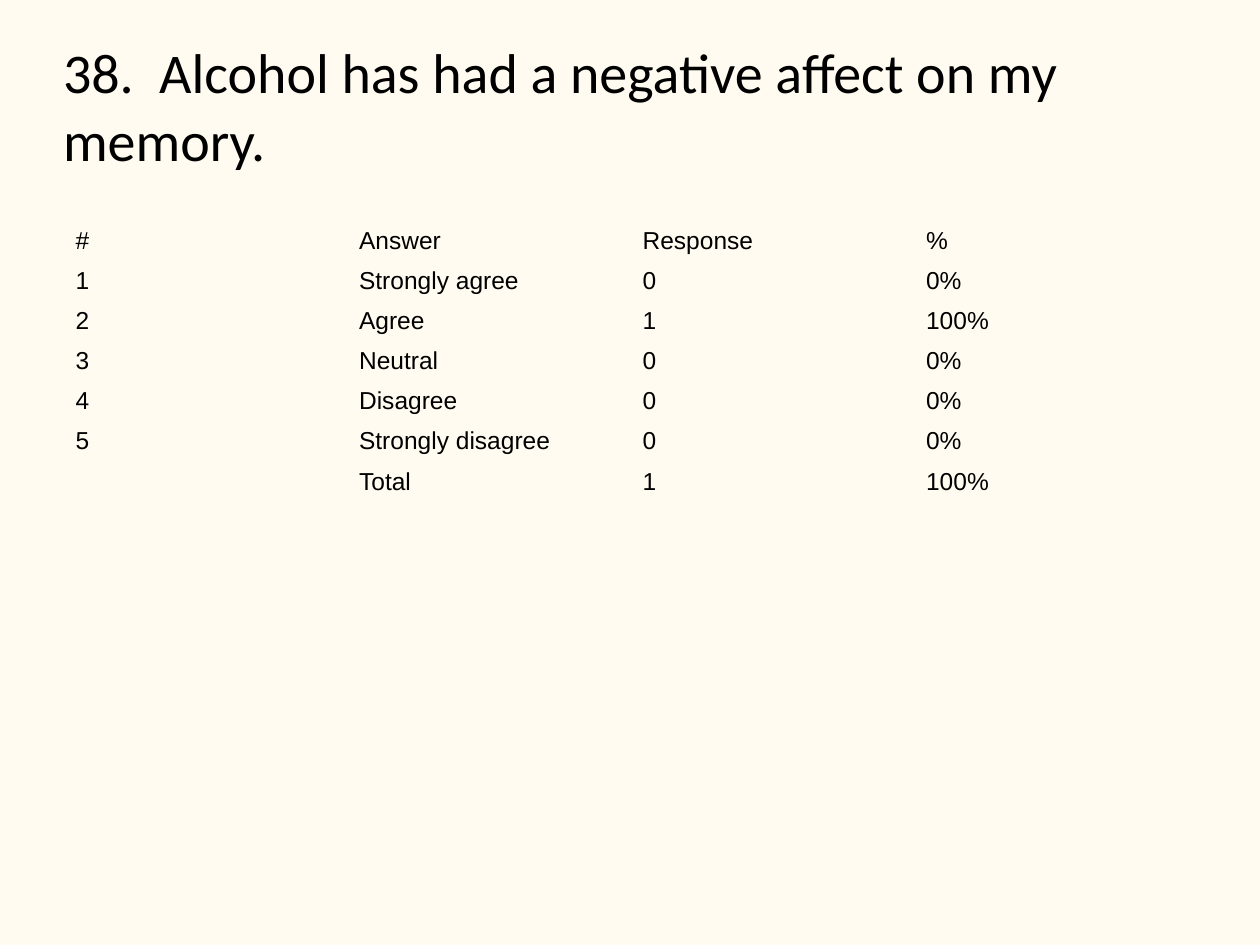
import pptx
import pptx.dml.color
import pptx.enum.text
import pptx.util
from lxml import etree
from pptx.oxml.ns import qn
from pptx.util import Inches

TITLE = "38.  Alcohol has had a negative affect on my memory."
ROWS = [
    ("#", "Answer", "Response", "%"),
    ("1", "Strongly agree", "0", "0%"),
    ("2", "Agree", "1", "100%"),
    ("3", "Neutral", "0", "0%"),
    ("4", "Disagree", "0", "0%"),
    ("5", "Strongly disagree", "0", "0%"),
    ("", "Total", "1", "100%"),
]

BACKGROUND = pptx.dml.color.RGBColor(0xFF, 0xFB, 0xF0)
BLACK = pptx.dml.color.RGBColor(0, 0, 0)
LEFT, WIDTH = 0.5, 9
TABLE_TOP, ROW_HEIGHT = 1.75, 0.19
CELL_SIZE = 14


def format_runs(paragraph, font_name, size):
    paragraph.alignment = pptx.enum.text.PP_ALIGN.LEFT
    for run in paragraph.runs:
        run.font.name = font_name
        run.font.size = pptx.util.Pt(size)
        run.font.bold = False
        run.font.color.rgb = BLACK


def set_round_rectangle(shape):
    """Give a placeholder a rounded rectangle outline with radius 0."""
    geometry = etree.SubElement(shape._element.spPr, qn("a:prstGeom"),
                                prst="roundRect")
    adjustments = etree.SubElement(geometry, qn("a:avLst"))
    etree.SubElement(adjustments, qn("a:gd"), name="adj", fmla="val 0")


def add_title(slide):
    title = slide.shapes.title
    title.left, title.top = Inches(LEFT), Inches(0.3)
    title.width, title.height = Inches(WIDTH), Inches(1.25)
    set_round_rectangle(title)
    frame = title.text_frame
    frame.text = TITLE
    frame.word_wrap = True
    frame.auto_size = pptx.enum.text.MSO_AUTO_SIZE.NONE
    frame.vertical_anchor = pptx.enum.text.MSO_ANCHOR.TOP
    frame.margin_left = frame.margin_right = 0
    frame.margin_top = frame.margin_bottom = 0
    format_runs(frame.paragraphs[0], "Calibri", 32)


def add_answer_table(slide):
    table = slide.shapes.add_table(
        len(ROWS), len(ROWS[0]), Inches(LEFT), Inches(TABLE_TOP),
        Inches(WIDTH), Inches(ROW_HEIGHT * len(ROWS))).table
    table.first_row = table.horz_banding = False
    # The "No Style, No Grid" table style has no borders
    style = table._tbl.tblPr.find(qn("a:tableStyleId"))
    style.text = "{2D5ABB26-0587-4C30-8999-92F81FD0307C}"
    for row, texts in zip(table.rows, ROWS):
        row.height = Inches(ROW_HEIGHT)
        for cell, text in zip(row.cells, texts):
            cell.fill.background()
            cell.text = text
            paragraph = cell.text_frame.paragraphs[0]
            format_runs(paragraph, "Arial", CELL_SIZE)
            if not text:
                # Keeps the empty cell from making its row taller
                etree.SubElement(paragraph._p, qn("a:endParaRPr"),
                                 sz=str(CELL_SIZE * 100))


def main():
    presentation = pptx.Presentation()
    presentation.slide_width = Inches(10)
    presentation.slide_height = Inches(7.5)
    slide = presentation.slides.add_slide(presentation.slide_layouts[5])
    slide.background.fill.solid()
    slide.background.fill.fore_color.rgb = BACKGROUND
    add_title(slide)
    add_answer_table(slide)
    presentation.save("out.pptx")


if __name__ == "__main__":
    main()
